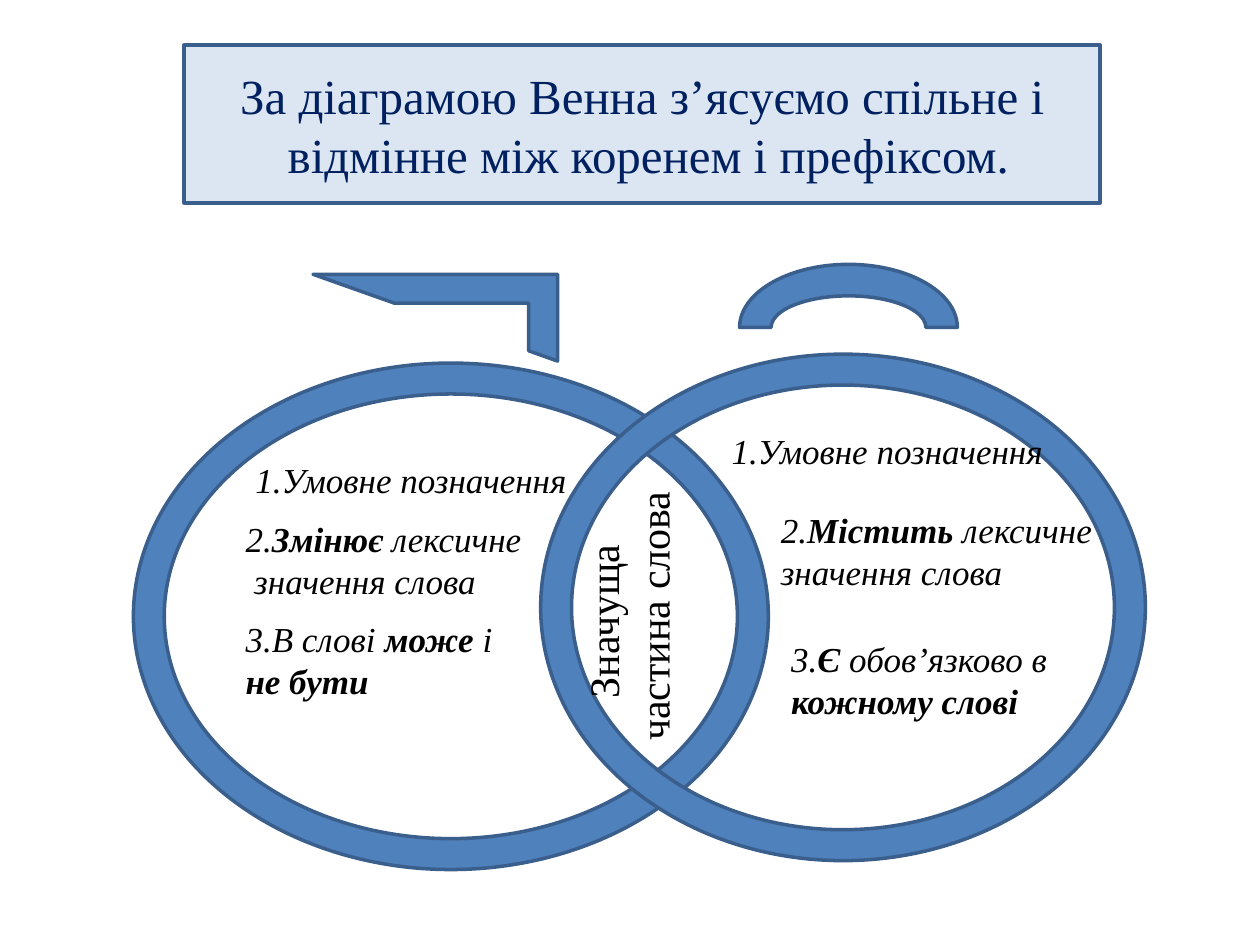
from dataclasses import dataclass

from pptx import Presentation
from pptx.dml.color import RGBColor as RGB
from pptx.enum.shapes import MSO_SHAPE as SHAPE
from pptx.enum.text import MSO_ANCHOR as ANCHOR, MSO_AUTO_SIZE as AUTO, PP_ALIGN as ALIGN
from pptx.util import Cm, Pt


@dataclass(frozen=True)
class Theme:
    font: str = "Times New Roman"
    panel: RGB = RGB(0xDC, 0xE6, 0xF2)
    ring: RGB = RGB(0x4F, 0x81, 0xBD)
    outline: RGB = RGB(0x3A, 0x5F, 0x8C)
    heading: RGB = RGB(0x00, 0x20, 0x60)
    text: RGB = RGB(0, 0, 0)
    title_size: Pt = Pt(28)
    shared_size: Pt = Pt(24)
    note_size: Pt = Pt(20)


T = Theme()


def style_font(font, color=T.text, **formats):
    font.color.rgb = color
    for name, value in {"name": T.font, **formats}.items():
        setattr(font, name, value)


def paint(sp, fill):
    sp.fill.solid()
    sp.fill.fore_color.rgb = fill
    sp.line.color.rgb = T.outline
    sp.line.width = Pt(2)


def set_title(s, text, box):
    sp = s.shapes.title
    for name, value in zip(("left", "top", "width", "height"), box):
        setattr(sp, name, Cm(value))
    paint(sp, T.panel)
    tf = sp.text_frame
    tf.text = text
    tf.vertical_anchor = ANCHOR.MIDDLE
    p = tf.paragraphs[0]
    p.alignment = ALIGN.CENTER
    for r in p.runs:
        style_font(r.font, T.heading, size=T.title_size)


def add_figure(s, kind, box, rotation=0, adjust=None):
    sp = s.shapes.add_shape(kind, *map(Cm, box))
    sp.shadow.inherit = False
    sp.rotation = rotation
    if adjust is not None:
        sp.adjustments[0] = adjust
    paint(sp, T.ring)


def add_text(s, box, lines, wrap=False, align=ALIGN.LEFT, **formats):
    """Each line alternates plain and bold pieces, split by '*'."""
    tf = s.shapes.add_textbox(*map(Cm, box)).text_frame
    tf.word_wrap = wrap
    tf.auto_size = AUTO.SHAPE_TO_FIT_TEXT
    for i, line in enumerate(lines):
        p = tf.add_paragraph() if i else tf.paragraphs[0]
        p.alignment = align
        for j, piece in enumerate(line.split("*")):
            if piece:
                r = p.add_run()
                r.text = piece
                style_font(r.font, bold=j % 2 == 1, **formats)
    return tf


def main():
    prs = Presentation()
    prs.slide_width, prs.slide_height = Cm(25.4), Cm(19.05)
    s = prs.slides.add_slide(prs.slide_layouts[5])

    set_title(s, "За діаграмою Венна з’ясуємо спільне і\v відмінне між коренем і префіксом.",
              (3.71, 0.91, 18.47, 3.18))

    # Venn rings: prefix, root
    for box in ((2.69, 7.32, 12.8, 10.21), (10.9, 7.14, 12.19, 10.21)):
        add_figure(s, SHAPE.DONUT, box, adjust=0.061)

    # Shared part, read from bottom to top
    tf = add_text(s, (11.51, 9.12, 2.57, 6.6), ["Значуща ", "частина слова"], wrap=True,
                  align=ALIGN.CENTER, size=T.shared_size)
    tf._txBody.bodyPr.set("vert", "vert270")

    # Features of each word part
    notes = [
        ((14.5, 8.53, 6.83, 1.11), ["1.Умовне позначення"], False),
        ((4.9, 9.12, 6.83, 1.11), ["1.Умовне позначення"], False),
        ((4.7, 10.31, 6.6, 1.96), ["2.*Змінює *лексичне", " значення слова"], True),
        ((15.49, 10.13, 7.01, 1.96), ["2.*Містить* лексичне", "значення слова"], False),
        ((4.7, 12.32, 5.69, 1.96), ["3.В слові *може *і", "*не бути*"], False),
        ((15.7, 12.73, 5.87, 1.96), ["3.*Є* обов’язково в", "*кожному слові*"], False),
    ]
    for box, lines, wrap in notes:
        add_text(s, box, lines, wrap, size=T.note_size, italic=True)

    # Signs for prefix and root
    add_figure(s, SHAPE.HALF_FRAME, (7.9, 3.94, 1.75, 4.93), rotation=90)
    add_figure(s, SHAPE.BLOCK_ARC, (14.91, 5.33, 4.39, 2.54))

    prs.save("out.pptx")


if __name__ == "__main__":
    main()
